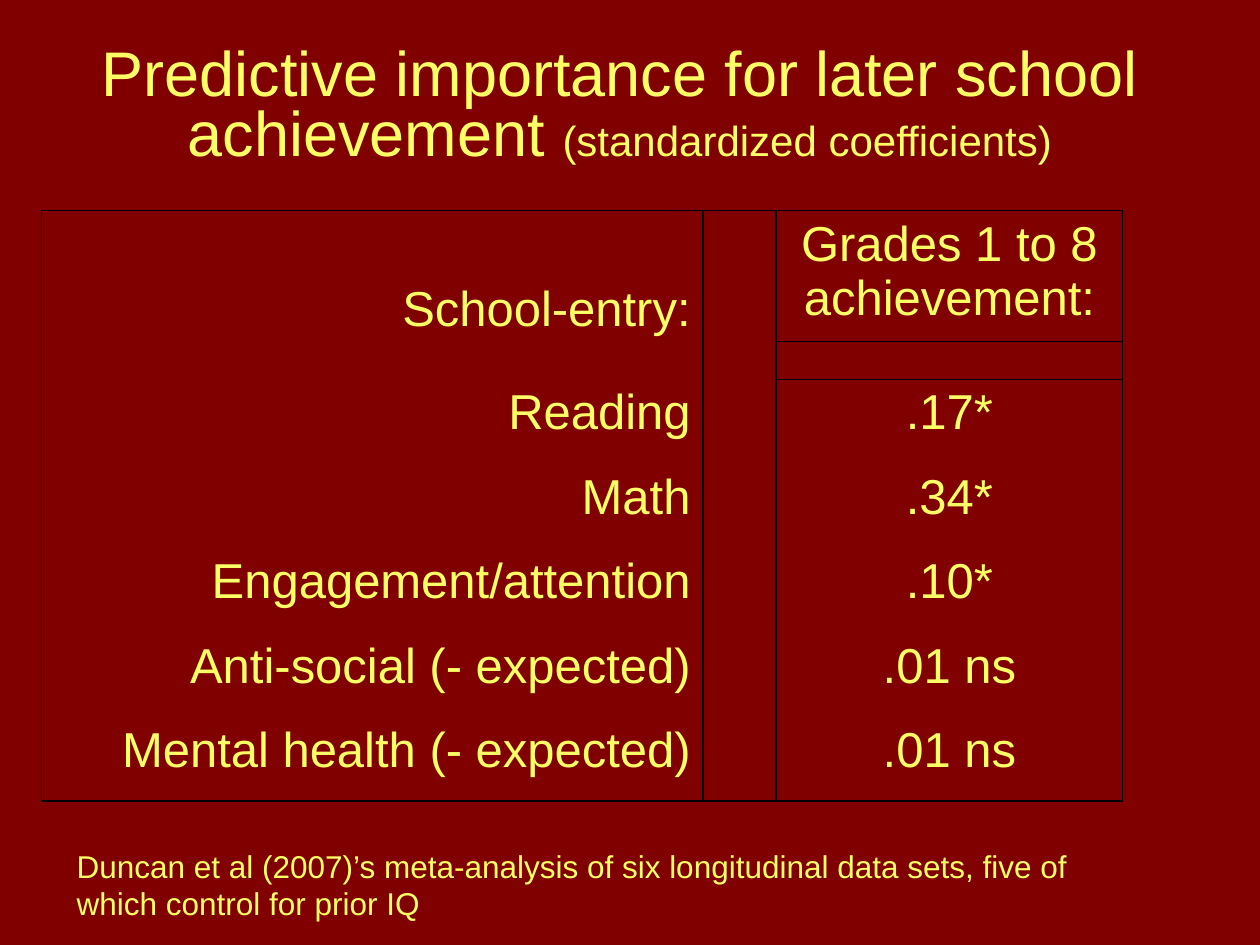
from lxml import etree
from pptx import Presentation
from pptx import util as u
from pptx.dml import color
from pptx.enum import text
from pptx.oxml import ns

YELLOW, MAROON, BLACK = "FFFF66", "800000", "000000"
CENTER, RIGHT = text.PP_ALIGN.CENTER, text.PP_ALIGN.RIGHT
MIDDLE, BOTTOM = text.MSO_ANCHOR.MIDDLE, text.MSO_ANCHOR.BOTTOM
NO_GRID = "{2D5ABB26-0587-4C30-8999-92F81FD0307C}"
MEASURES = [
    ("Reading", ".17*"),
    ("Math", ".34*"),
    ("Engagement/attention", ".10*"),
    ("Anti-social (- expected)", ".01 ns"),
    ("Mental health (- expected)", ".01 ns"),
]


def rgb(value):
    return color.RGBColor.from_string(value)


def add_span(para, words, size=28, font="Arial", tint=YELLOW):
    span = para.add_run()
    span.text = words
    span.font.size = u.Pt(size)
    span.font.name = font
    span.font.color.rgb = rgb(tint)


def add_border(cell, side, visible):
    line = etree.SubElement(cell._tc.get_or_add_tcPr(), ns.qn("a:ln" + side), w=str(u.Pt(1)))
    if visible:
        fill = etree.SubElement(line, ns.qn("a:solidFill"))
        etree.SubElement(fill, ns.qn("a:srgbClr"), val=BLACK)
    else:
        etree.SubElement(line, ns.qn("a:noFill"))


class SlideBuilder:
    def __init__(self, deck):
        self.slide = deck.slides.add_slide(deck.slide_layouts[6])
        self.slide.background.fill.solid()
        self.slide.background.fill.fore_color.rgb = rgb(MAROON)

    def text_box(self, left, top, width, height, spans, align=None, anchor=None, spacing=None):
        box = self.slide.shapes.add_textbox(*map(u.Inches, (left, top, width, height)))
        frame = box.text_frame
        frame.word_wrap = True
        frame.vertical_anchor = anchor
        para = frame.paragraphs[0]
        para.alignment = align
        para.line_spacing = spacing
        for words, size in spans:
            add_span(para, words, size=size)

    def table(self, left, top, widths, heights, rows, aligns):
        frame = self.slide.shapes.add_table(
            len(heights), len(widths), u.Inches(left), u.Inches(top),
            u.Inches(sum(widths)), u.Inches(sum(heights)))
        grid = frame.table
        grid.first_row = grid.horz_banding = False
        grid._tbl.tblPr.find(ns.qn("a:tableStyleId")).text = NO_GRID
        for column, width in zip(grid.columns, widths):
            column.width = u.Inches(width)
        for row, height in zip(grid.rows, heights):
            row.height = u.Inches(height)
        last_row, last_column = len(rows) - 1, len(widths) - 1
        for r, row in enumerate(rows):
            for c, words in enumerate(row):
                cell = grid.cell(r, c)
                ruled = c == last_column
                borders = {
                    "L": True,
                    "R": True,
                    "T": r == 0 or (ruled and r <= 2),
                    "B": r == last_row or (ruled and r < 2),
                }
                for side, visible in borders.items():
                    add_border(cell, side, visible)
                cell.fill.background()
                if words:
                    para = cell.text_frame.paragraphs[0]
                    para.alignment = aligns[c]
                    add_span(para, words)
                else:
                    cell.margin_top = cell.margin_bottom = 0
        return grid


def main():
    deck = Presentation()
    deck.slide_width, deck.slide_height = u.Inches(10), u.Inches(7.5)
    builder = SlideBuilder(deck)
    builder.text_box(
        0.42, 0.17, 9, 1.38,
        [("Predictive importance for later school achievement ", 36),
         ("(standardized coefficients)", 24)],
        align=CENTER, anchor=MIDDLE, spacing=0.8)

    rows = [("School-entry:", "", "Grades 1 to 8 achievement:"), ("", "", "")]
    rows += [(measure, "", value) for measure, value in MEASURES]
    grid = builder.table(
        0.33, 1.67, [5.25, 0.58, 2.75], [1.04, 0.3] + [0.67] * len(MEASURES),
        rows, [RIGHT, None, CENTER])
    entry = grid.cell(0, 0)
    entry.vertical_anchor = BOTTOM
    entry.margin_bottom = u.Inches(0.04)

    builder.text_box(
        0.51, 6.67, 8.75, 0.71,
        [("Duncan et al (2007)’s meta-analysis of six longitudinal data sets, "
          "five of which control for prior IQ", 18)])
    deck.save("out.pptx")


if __name__ == "__main__":
    main()
